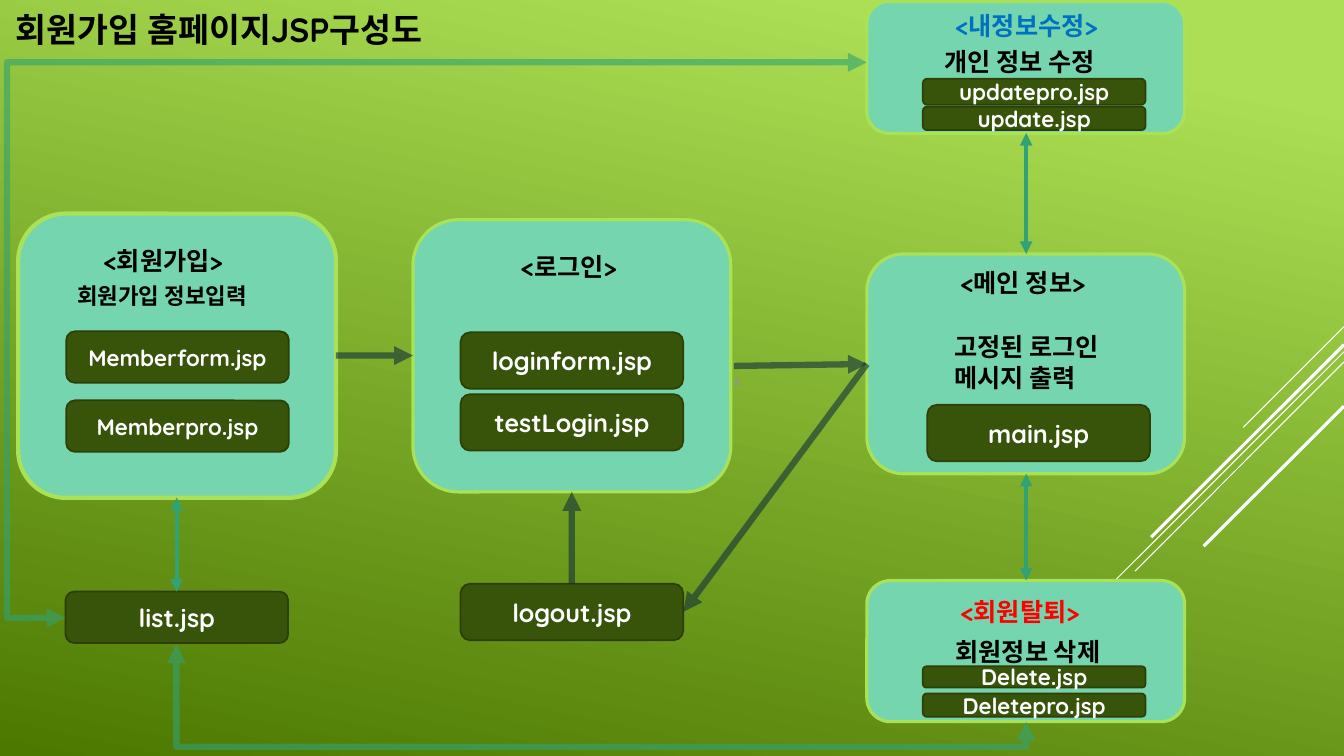
from lxml.etree import SubElement
from pptx import Presentation
from pptx.dml.color import RGBColor
from pptx.enum.shapes import MSO_CONNECTOR, MSO_SHAPE
from pptx.enum.text import MSO_ANCHOR, PP_ALIGN
from pptx.oxml.ns import qn
from pptx.util import Pt

FONT = "Quicksand"
BLACK, WHITE = "000000", "FFFFFF"
SLATE, TEAL = "12303A", "31A274"
PANEL_W, CHIP_W = 227, 159
MEMBER_X, LOGIN_X, MAIN_X = 13, 295, 619.2
MAIN_MID = 733


def rgb(value):
    return RGBColor.from_string(value)


def background(s):
    fill = s.background.fill
    fill.gradient()
    fill.gradient_angle = 258
    for stop, position, color in zip(fill.gradient_stops, (0.1, 1), ("ACDF55", "4C7800")):
        stop.position = position
        stop.color.rgb = rgb(color)


def add_run(p, text, size, color):
    r = p.add_run()
    r.text = text
    r.font.name = FONT
    r.font.size = Pt(size)
    r.font.bold = True
    r.font.color.rgb = rgb(color)


def rounded(s, x, y, w, h, fill, line, weight):
    sp = s.shapes.add_shape(MSO_SHAPE.ROUNDED_RECTANGLE, Pt(x), Pt(y), Pt(w), Pt(h))
    sp.shadow.inherit = False
    sp.fill.solid()
    sp.fill.fore_color.rgb = rgb(fill)
    sp.line.color.rgb = rgb(line)
    sp.line.width = Pt(weight)
    return sp


def panel(s, x, y, h, weight=2.25):
    rounded(s, x, y, PANEL_W, h, "75D5AE", "A9E257", weight)


def chip(s, text, x, y, h, size=18):
    """Dark box that names one JSP file."""
    tf = rounded(s, x, y, CHIP_W, h, "38540A", "2E3E07", 1.25).text_frame
    tf.vertical_anchor = MSO_ANCHOR.MIDDLE
    p = tf.paragraphs[0]
    p.alignment = PP_ALIGN.CENTER
    add_run(p, text, size, WHITE)


def label(s, lines, x, y, w=CHIP_W, h=29, size=18, color=BLACK):
    tf = s.shapes.add_textbox(Pt(x), Pt(y), Pt(w), Pt(h)).text_frame
    tf.word_wrap = True
    for i, text in enumerate(lines):
        p = tf.add_paragraph() if i else tf.paragraphs[0]
        add_run(p, text, size, color)


def connector(s, start, end, color, weight, ends=(), opacity=100, bend=None, turn=0):
    """Straight line, or an elbow when bend gives its adjustment; ends lists the arrowheads."""
    kind = MSO_CONNECTOR.STRAIGHT if bend is None else MSO_CONNECTOR.ELBOW
    c = s.shapes.add_connector(kind, *(Pt(v) for v in start + end))
    c.line.color.rgb = rgb(color)
    c.line.width = Pt(weight)
    sp_pr = c._element.spPr
    ln = sp_pr.find(qn("a:ln"))
    if opacity < 100:
        SubElement(ln.find(".//" + qn("a:srgbClr")), qn("a:alpha"), val=str(opacity * 1000))
    for tag in ends:
        SubElement(ln, qn("a:" + tag), type="triangle")
    SubElement(sp_pr, qn("a:effectLst"))
    if bend is not None:
        guides = sp_pr.find(qn("a:prstGeom")).get_or_add_avLst()
        SubElement(guides, qn("a:gd"), name="adj1", fmla=f"val {round(bend * 100000)}")
    if turn:
        sp_pr.find(qn("a:xfrm")).set("rot", str(turn * 60000))


def main():
    prs = Presentation()
    prs.slide_width, prs.slide_height = Pt(960), Pt(540)
    s = prs.slides.add_slide(prs.slide_layouts[6])
    both, forward = ("headEnd", "tailEnd"), ("tailEnd",)
    background(s)

    for top, x, bottom, weight in (
        (233.3, 888, 305.3, 0.75), (251.3, 725, 486, 0.75), (258.5, 810.7, 408, 0.75),
        (246.2, 822.2, 383.8, 2.25), (290.2, 859.7, 390.2, 2.25),
    ):
        connector(s, (960, top), (x, bottom), WHITE, weight)

    panel(s, MEMBER_X, 152.6, 203, 3)
    panel(s, LOGIN_X, 157, 194.4)
    for y, h in ((1, 94.3), (181.4, 157), (414.7, 100.8)):
        panel(s, MAIN_X, y, h)

    label(s, ["회원가입 홈페이지JSP구성도"], 4.3, 2.9, 594, 36, 24)
    label(s, ["<회원가입>"], 67, 171.4)
    label(s, ["회원가입 정보입력"], 48.2, 198, h=26.6, size=16)
    label(s, ["<로그인>"], 365, 175.7)
    label(s, ["<내정보수정>"], 675.4, 3.6, color="0070C0")
    label(s, ["개인 정보 수정"], 667.4, 29.5)
    label(s, ["<메인 정보>"], 679, 187.2)
    label(s, ["고정된 로그인", "메시지 출력"], 674.6, 233.3, h=51)
    label(s, ["<회원탈퇴>"], 679, 422.6, color="FF0000")
    label(s, ["회원정보 삭제"], 675.4, 450.7)

    chip(s, "list.jsp", 46.8, 422.6, 36.7)
    for text, y in (("Memberform.jsp", 236.7), ("Memberpro.jsp", 286)):
        chip(s, text, 47.3, y, 36.7, 16)
    for text, y in (("loginform.jsp", 237.4), ("testLogin.jsp", 281.6), ("logout.jsp", 417)):
        chip(s, text, 329, y, 40.3)
    chip(s, "main.jsp", 662.4, 289.2, 40.3)
    for text, y, h in (
        ("updatepro.jsp", 56.2, 18.7), ("update.jsp", 76.3, 16.6),
        ("Delete.jsp", 476, 15.2), ("Deletepro.jsp", 495.4, 16.6),
    ):
        chip(s, text, 659.2, y, h, 16)

    connector(s, (526.3, 270.7), (526.3, 269.3), "909789", 0.75, forward, 60)
    for start, end in (
        ((240, 254), (295, 254)),
        ((MAIN_X, 260), (488.2, 437)),
        ((408.4, 417), (408.4, 351.4)),
        ((524.2, 261.4), (MAIN_X, 260)),
    ):
        connector(s, start, end, SLATE, 4.5, forward, 60)
    for x, top, bottom in (
        (126.2, 355.3, 422.6), (MAIN_MID, 95, 181.4), (MAIN_MID, 338.4, 414.7),
    ):
        connector(s, (x, top), (x, bottom), TEAL, 3, both)
    connector(s, (457.2, 184.3), (401.8, 791.3), TEAL, 4.5, both, 60, bend=1.324, turn=270)
    connector(s, (46.8, 441.4), (MAIN_X, 44.6), TEAL, 4.5, both, 60, bend=-0.073)

    prs.save("out.pptx")


if __name__ == "__main__":
    main()
